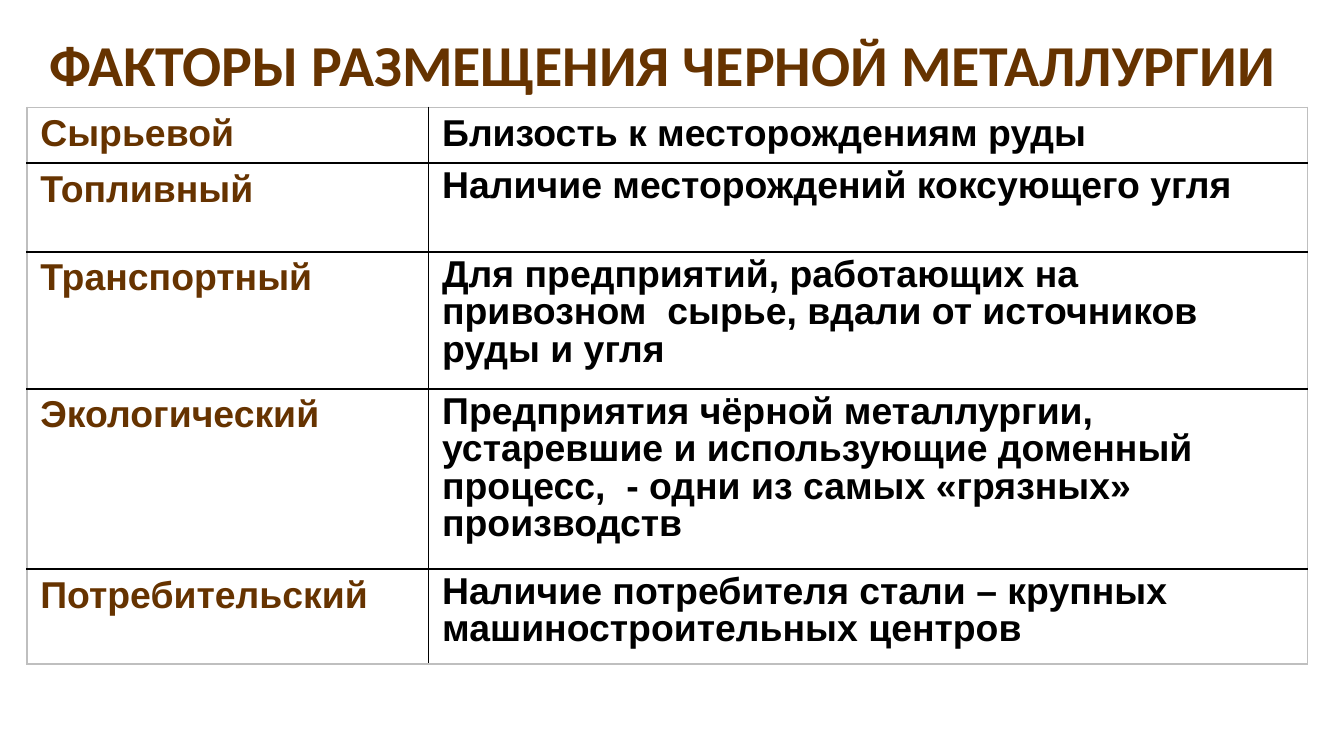
from lxml import etree
from pptx import Presentation
from pptx import util as u
from pptx.dml.color import RGBColor
from pptx.enum import text
from pptx.oxml.ns import qn

WIDE = u.Inches(10)
HIGH = WIDE * 9 // 16
BROWN = RGBColor(0x66, 0x33, 0x00)
BLACK = RGBColor(0, 0, 0)
GRAY = RGBColor(0xBF, 0xBF, 0xBF)

HEAD = "ФАКТОРЫ РАЗМЕЩЕНИЯ ЧЕРНОЙ МЕТАЛЛУРГИИ"
# Factor, meaning, row height in inches
ROWS = [
    ("Сырьевой", "Близость к месторождениям руды", 0.40),
    ("Топливный", "Наличие месторождений коксующего угля", 0.66),
    ("Транспортный", "Для предприятий, работающих на привозном  сырье, "
     "вдали от источников руды и угля", 1.02),
    ("Экологический", "Предприятия чёрной металлургии, устаревшие и "
     "использующие доменный процесс,  - одни из самых «грязных» "
     "производств", 1.34),
    ("Потребительский", "Наличие потребителя стали – крупных "
     "машиностроительных центров", 0.71),
]
COLS = (2.99, 6.54)


def write(para, words, font, size, color):
    run = para.add_run()
    run.text = words
    run.font.name, run.font.size, run.font.bold = font, u.Pt(size), True
    run.font.color.rgb = color


def edge(cell, side, color):
    line = etree.SubElement(cell._tc.get_or_add_tcPr(), qn("a:ln" + side),
                            w=str(u.Pt(1)))
    fill = etree.SubElement(line, qn("a:solidFill"))
    etree.SubElement(fill, qn("a:srgbClr"), val=str(color))


def title(slide, box):
    frame = slide.shapes.add_textbox(*box).text_frame
    frame.word_wrap = True
    frame.margin_top = frame.margin_bottom = 0
    frame.vertical_anchor = text.MSO_ANCHOR.MIDDLE
    para = frame.paragraphs[0]
    para.alignment = text.PP_ALIGN.CENTER
    write(para, HEAD, "Calibri", 31, BROWN)


def grid(slide, box):
    table = slide.shapes.add_table(len(ROWS), len(COLS), *box).table
    table.first_row = table.horz_banding = False
    # Shares of the box
    for col, part in zip(table.columns, COLS):
        col.width = int(box[2] * part / sum(COLS))
    total = sum(row[-1] for row in ROWS)
    for row, (*_, part) in zip(table.rows, ROWS):
        row.height = int(box[3] * part / total)

    last = len(ROWS) - 1
    for r, (name, note, _) in enumerate(ROWS):
        for c, (words, color) in enumerate([(name, BROWN), (note, BLACK)]):
            cell = table.cell(r, c)
            cell.margin_left, cell.margin_right = u.Inches(0.1), u.Inches(0.12)
            cell.margin_top = cell.margin_bottom = u.Inches(0.04)
            # Gray outer frame, black inner lines
            outer = {"L": c == 0, "R": c == 1, "T": r == 0, "B": r == last}
            for side, out in outer.items():
                edge(cell, side, GRAY if out else BLACK)
            cell.fill.background()
            para = cell.text_frame.paragraphs[0]
            if c and r:
                para.line_spacing = 0.9
            write(para, words, "Arial", 20, color)


def main():
    deck = Presentation()
    deck.slide_width, deck.slide_height = WIDE, HIGH
    slide = deck.slides.add_slide(deck.slide_layouts[6])
    title(slide, [u.Inches(n) for n in (0.12, 0.27, 9.61, 0.41)])
    grid(slide, [u.Inches(n) for n in (0.2, 0.8, 9.53, 4.13)])
    deck.save("out.pptx")


if __name__ == "__main__":
    main()
